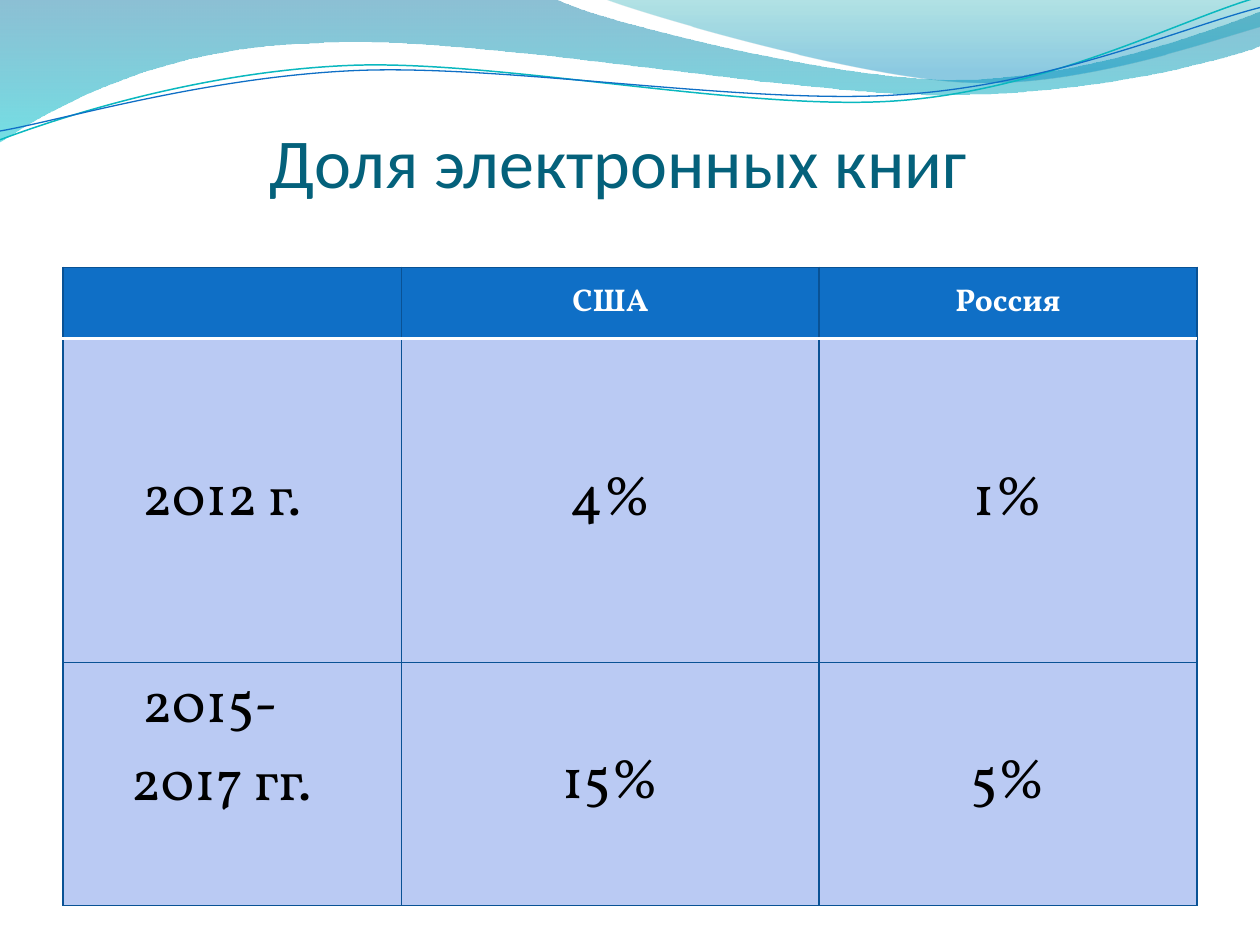
"""Build a slide with a wave banner, a title and a table of e-book shares."""
from lxml import etree
from pptx import Presentation
from pptx.dml.color import RGBColor
from pptx.enum import text as t
from pptx.oxml import ns
from pptx.util import Inches, Pt

TEAL = RGBColor(0x04, 0x61, 0x7B)
BLUE = RGBColor(0x0F, 0x6F, 0xC6)
AQUA = RGBColor(0x0A, 0xB8, 0xBF)
NAVY = RGBColor(0x09, 0x52, 0x95)
PALE = RGBColor(0xBA, 0xCA, 0xF3)
WHITE = RGBColor(0xFF, 0xFF, 0xFF)
BLACK = RGBColor(0, 0, 0)

TITLE = "Доля электронных книг"
ROWS = [
    ["", "США", "Россия"],
    ["2012 г.", "4%", "1%"],
    ["2015-\n2017 гг.", "15%", "5%"],
]
COLS = [2.69, 3.31, 3]
HIGHS = [0.57, 2.57, 1.93]
DENTS = [0.53, 0.44]

BANDS = [
    ([(0, 0), (4.4, -0.01), (4.76, 0.17, 6.64, 0.63, 7.58, 0.63),
      (8.53, 0.63, 9.58, 0.26, 10, 0.09), (10.01, 0.36),
      (9.83, 0.44, 8.7, 0.76, 7.46, 0.75), (6.22, 0.75, 3.82, 0.28, 2.57, 0.34),
      (1.29, 0.36, 0.46, 0.83, -0.01, 1.13), (0, 0)],
     [(0, RGBColor(0x00, 0x74, 0xA1), 45), (1, RGBColor(0x00, 0xC6, 0xCF), 55)]),
    ([(4.79, -0.01), (5.09, 0.11, 6.82, 0.62, 7.69, 0.65),
      (8.56, 0.69, 9.61, 0.32, 10, 0.21), (10, 0), (4.79, -0.01)],
     [(0, RGBColor(0x00, 0xA1, 0xA9), 30), (0.8, RGBColor(0x00, 0x8B, 0xBF), 45)]),
]
WAVES = [
    ([(0, 1.11), (0.48, 0.93, 1.58, 0.57, 2.77, 0.52),
      (3.95, 0.47, 5.93, 0.89, 7.13, 0.8), (8.33, 0.71, 9.38, 0.15, 9.98, -0.02)],
     AQUA, 0.85),
    ([(0, 1.04), (0.47, 0.96, 1.64, 0.61, 2.83, 0.56),
      (4.03, 0.51, 5.97, 0.84, 7.17, 0.75), (8.36, 0.67, 9.41, 0.21, 10, 0.06)],
     BLUE, 0.75),
]


def draw(slide, path, close):
    dots = [(Inches(part[k]), Inches(part[k + 1]))
            for part in path for k in range(0, len(part), 2)]
    pen = slide.shapes.build_freeform(*dots[0])
    pen.add_line_segments(dots[1:], close=close)
    shape = pen.convert_to_shape()
    shape.shadow.inherit = False
    lines = iter(list(shape._element.spPr.iter(ns.qn("a:lnTo"))))
    for part in path[1:]:
        first = next(lines)
        if len(part) == 6:
            first.tag = ns.qn("a:cubicBezTo")
            for _ in range(2):
                line = next(lines)
                first.append(line[0])
                line.getparent().remove(line)
    return shape


def band(slide, path, stops):
    shape = draw(slide, path, True)
    shape.line.fill.background()
    shape.fill.gradient()
    shape.fill.gradient_angle = 270
    for stop, (pos, color, _) in zip(shape.fill.gradient_stops, stops):
        stop.position = pos
        stop.color.rgb = color
    tints = shape._element.spPr.iter(ns.qn("a:srgbClr"))
    for tint, (_, _, alpha) in zip(tints, stops):
        etree.SubElement(tint, ns.qn("a:alpha"), val=str(alpha * 1000))


def wave(slide, path, color, width):
    shape = draw(slide, path, False)
    shape.fill.background()
    shape.line.color.rgb = color
    shape.line.width = Pt(width)


def write(frame, words, font="Vollkorn", size=32, color=BLACK, bold=False,
          align=t.PP_ALIGN.CENTER, dents=()):
    frame.word_wrap = True
    frame.text = words
    for para in frame.paragraphs:
        para.alignment = align
        for run in para.runs:
            run.font.name = font
            run.font.size = Pt(size)
            run.font.bold = bold
            run.font.color.rgb = color
    for para, dent in zip(frame.paragraphs, dents):
        para._p.get_or_add_pPr().set("marL", str(Inches(dent)))


def edge(cell, side, color, width):
    props = cell._tc.get_or_add_tcPr()
    line = etree.SubElement(props, ns.qn("a:ln" + side), w=str(Pt(width)))
    fill = etree.SubElement(line, ns.qn("a:solidFill"))
    etree.SubElement(fill, ns.qn("a:srgbClr"), val=str(color))


def grid(slide):
    table = slide.shapes.add_table(len(ROWS), len(COLS), Inches(0.5), Inches(2.12),
                                   Inches(sum(COLS)), Inches(sum(HIGHS))).table
    for col, width in zip(table.columns, COLS):
        col.width = Inches(width)
    for row, high in zip(table.rows, HIGHS):
        row.height = Inches(high)
    for i, row in enumerate(ROWS):
        for j, words in enumerate(row):
            cell = table.cell(i, j)
            cell.vertical_anchor = t.MSO_ANCHOR.MIDDLE
            for side in "LRTB":
                white = (i, side) in ((0, "B"), (1, "T"))
                edge(cell, side, WHITE if white else NAVY, 2 if white else 0.75)
            cell.fill.solid()
            cell.fill.fore_color.rgb = PALE if i else BLUE
            if not i:
                write(cell.text_frame, words, size=18, color=WHITE, bold=True)
            elif j:
                write(cell.text_frame, words)
            else:
                write(cell.text_frame, words, align=t.PP_ALIGN.LEFT, dents=DENTS)
    table.cell(2, 0).margin_bottom = Inches(0.69)


def main():
    deck = Presentation()
    deck.slide_width, deck.slide_height = Inches(10), Inches(7.5)
    slide = deck.slides.add_slide(deck.slide_layouts[6])
    for item in BANDS:
        band(slide, *item)
    for item in WAVES:
        wave(slide, *item)
    box = slide.shapes.add_textbox(Inches(0.12), Inches(0.36), Inches(9), Inches(1.25))
    frame = box.text_frame
    frame.vertical_anchor = t.MSO_ANCHOR.BOTTOM
    frame.margin_left, frame.margin_top = Inches(2.02), Inches(0.05)
    frame.margin_right = frame.margin_bottom = 0
    write(frame, TITLE, font="Calibri", size=40, color=TEAL, align=t.PP_ALIGN.LEFT)
    grid(slide)
    deck.save("out.pptx")


if __name__ == "__main__":
    main()
